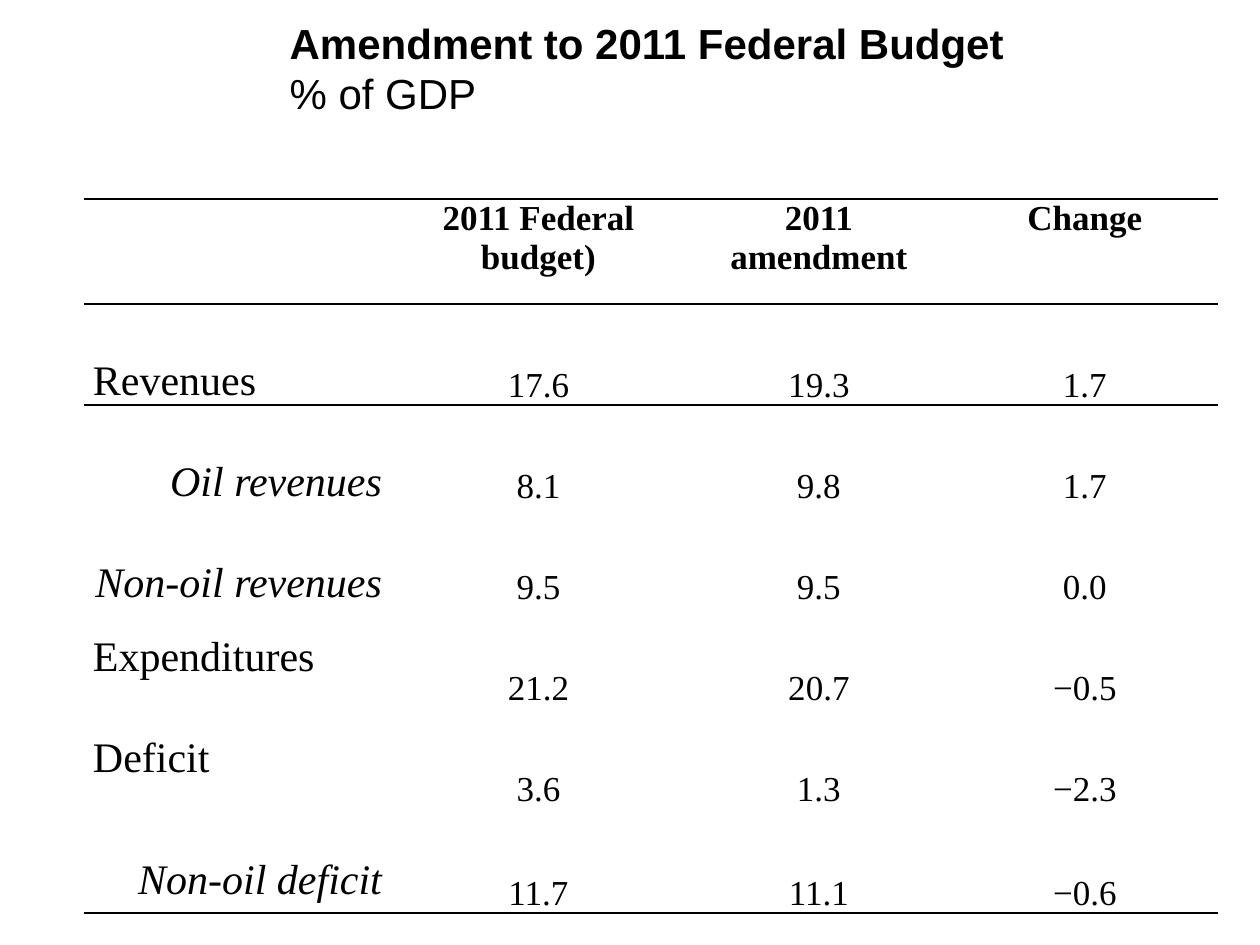
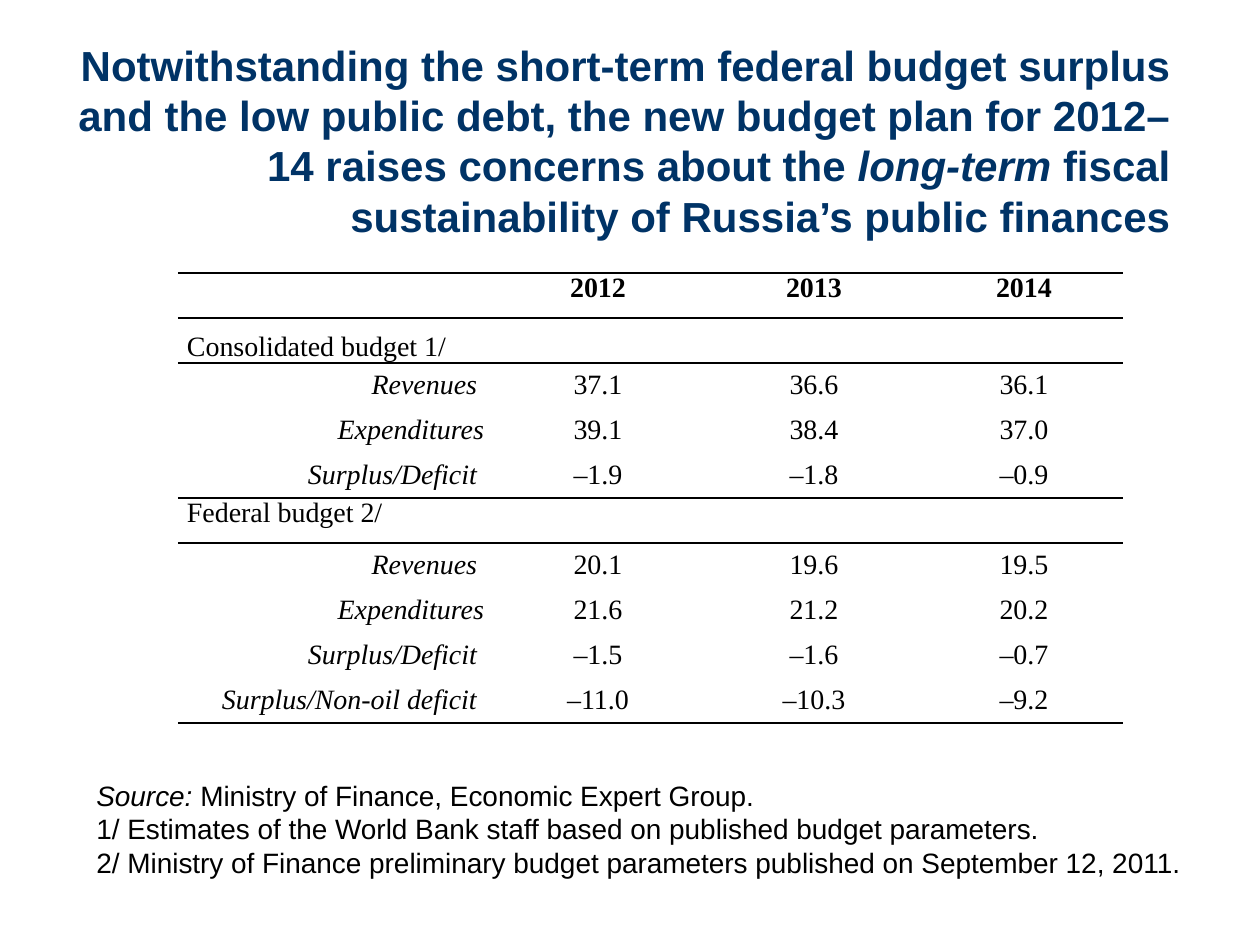
import pptx
import pptx.dml.color
import pptx.enum.text
import pptx.oxml
import pptx.oxml.ns
import pptx.util

PIXELS_PER_INCH = 126
SANS, SERIF = "Arial", "Times New Roman"
BLACK, NAVY = "000000", "003366"
PLAIN_TABLE_STYLE = "{2D5ABB26-0587-4C30-8999-92F81FD0307C}"
ALIGN = pptx.enum.text.PP_ALIGN
ANCHOR = pptx.enum.text.MSO_ANCHOR
TITLE_SIZE = 24

GROUP = {"anchor": ANCHOR.MIDDLE}
ITEM = {"anchor": ANCHOR.MIDDLE, "align": ALIGN.RIGHT, "italic": True}
LOW_GROUP = {"anchor": ANCHOR.BOTTOM}
LOW_ITEM = {**ITEM, "anchor": ANCHOR.BOTTOM}
TOP_GROUP = {"anchor": ANCHOR.TOP}
RAISED_ITEM = {**LOW_ITEM, "bottom": 9}

AMENDMENT_HEADER = ["2011 Federal budget)", "2011 amendment", "Change"]
AMENDMENT_ROWS = [
    ("Revenues", LOW_GROUP, ["17.6", "19.3", "1.7"]),
    ("Oil revenues", LOW_ITEM, ["8.1", "9.8", "1.7"]),
    ("Non-oil revenues", LOW_ITEM, ["9.5", "9.5", "0.0"]),
    ("Expenditures", GROUP, ["21.2", "20.7", "−0.5"]),
    ("Deficit", GROUP, ["3.6", "1.3", "−2.3"]),
    ("Non-oil deficit", RAISED_ITEM, ["11.7", "11.1", "−0.6"]),
]
PLAN_HEADER = ["2012", "2013", "2014"]
PLAN_ROWS = [
    ("Consolidated budget 1/", LOW_GROUP, ["", "", ""]),
    ("Revenues ", ITEM, ["37.1", "36.6", "36.1"]),
    ("Expenditures", ITEM, ["39.1", "38.4", "37.0"]),
    ("Surplus/Deficit ", ITEM, ["–1.9", "–1.8", "–0.9"]),
    ("Federal budget 2/", TOP_GROUP, ["", "", ""]),
    ("Revenues ", ITEM, ["20.1", "19.6", "19.5"]),
    ("Expenditures", ITEM, ["21.6", "21.2", "20.2"]),
    ("Surplus/Deficit ", ITEM, ["–1.5", "–1.6", "–0.7"]),
    ("Surplus/Non-oil deficit ", ITEM, ["–11.0", "–10.3", "–9.2"]),
]


def px(length):
    return pptx.util.Emu(round(length * 914400 / PIXELS_PER_INCH))


def color(hex_string):
    return pptx.dml.color.RGBColor.from_string(hex_string)


def write(para, text, size, font=SANS, fill=BLACK, bold=False, italic=False, align=ALIGN.LEFT):
    para.alignment = align
    para.font.size = pptx.util.Pt(size)
    if not text:
        return
    span = para.add_run()
    span.text = text
    span.font.name = font
    span.font.size = pptx.util.Pt(size)
    span.font.bold = bold
    span.font.italic = italic
    span.font.color.rgb = color(fill)


def write_lines(frame, lines, **text_format):
    for index, spans in enumerate(lines):
        para = frame.add_paragraph() if index else frame.paragraphs[0]
        for text, span_format in spans:
            write(para, text, **{**text_format, **span_format})


def place_text(shape, box, lines, anchor, **text_format):
    shape.left, shape.top, shape.width, shape.height = map(px, box)
    frame = shape.text_frame
    frame.word_wrap = True
    frame.auto_size = pptx.enum.text.MSO_AUTO_SIZE.NONE
    frame.vertical_anchor = anchor
    write_lines(frame, lines, **text_format)


def add_border(cell, side):
    line = pptx.oxml.parse_xml(
        f'<a:ln{side} {pptx.oxml.ns.nsdecls("a")} w="12700"><a:solidFill>'
        f'<a:srgbClr val="{BLACK}"/></a:solidFill></a:ln{side}>')
    cell._tc.get_or_add_tcPr().append(line)


def fill_cell(cell, text, size, anchor=ANCHOR.TOP, bottom=0, **text_format):
    cell.margin_left = cell.margin_right = px(9)
    cell.margin_top = 0
    cell.margin_bottom = px(bottom)
    cell.vertical_anchor = anchor
    write(cell.text_frame.paragraphs[0], text, size, font=SERIF, **text_format)


def add_budget_table(page, left, top, widths, heights, header, rows, rules,
                     label_size, value_size, value_anchor):
    graphic = page.shapes.add_table(len(heights), len(widths), px(left), px(top),
                                    px(sum(widths)), px(sum(heights)))
    table = graphic.table
    table.first_row = table.horz_banding = False
    table._tbl.tblPr.find(pptx.oxml.ns.qn("a:tableStyleId")).text = PLAIN_TABLE_STYLE
    for column, width in zip(table.columns, widths):
        column.width = px(width)
    for row, height in zip(table.rows, heights):
        row.height = px(height)

    for index, text in enumerate([""] + header):
        fill_cell(table.cell(0, index), text, value_size, bold=True, align=ALIGN.CENTER)
    for row, (label, label_format, values) in enumerate(rows, 1):
        fill_cell(table.cell(row, 0), label, label_size, **label_format)
        for column, value in enumerate(values, 1):
            fill_cell(table.cell(row, column), value, value_size,
                      anchor=value_anchor, align=ALIGN.CENTER)

    for row in range(len(heights)):
        for column in range(len(widths)):
            cell = table.cell(row, column)
            if row in rules:
                add_border(cell, "T")
            if row + 1 in rules:
                add_border(cell, "B")
            cell.fill.background()


def add_page(deck):
    return deck.slides.add_slide(deck.slide_layouts[5])


def build_amendment_page(deck):
    page = add_page(deck)
    place_text(page.shapes.title, (277, 11, 789, 165), [
        [("Amendment to 2011 Federal Budget", {"bold": True})],
        [("% of GDP", {})],
    ], ANCHOR.TOP, size=TITLE_SIZE)
    add_budget_table(page, 84, 199, [307, 295, 266, 266], [105] + [101] * 5 + [104],
                     AMENDMENT_HEADER, AMENDMENT_ROWS, rules={0, 1, 7},
                     label_size=24, value_size=20, value_anchor=ANCHOR.BOTTOM)


def build_plan_page(deck):
    page = add_page(deck)
    place_text(page.shapes.title, (42, 53, 1141, 194), [[
        ("Notwithstanding the short-term federal budget surplus and the low public debt, "
         "the new budget plan for 2012–14 raises concerns about the ", {}),
        ("long-term ", {"italic": True}),
        ("fiscal sustainability of Russia’s public finances", {}),
    ]], ANCHOR.BOTTOM, size=TITLE_SIZE, fill=NAVY, bold=True, align=ALIGN.RIGHT)
    add_budget_table(page, 178, 273, [315, 210, 222, 198], [45] * 10,
                     PLAN_HEADER, PLAN_ROWS, rules={0, 1, 5, 10},
                     label_size=16, value_size=16, value_anchor=ANCHOR.MIDDLE)
    notes_box = (84, 771, 1124, 115)
    place_text(page.shapes.add_textbox(*map(px, notes_box)), notes_box, [
        [("Source:", {"italic": True}), (" Ministry of Finance, Economic Expert Group.", {})],
        [("1/ Estimates of the World Bank staff based on published budget parameters.", {})],
        [("2/ Ministry of Finance preliminary budget parameters published on "
          "September 12, 2011.", {})],
    ], ANCHOR.MIDDLE, size=16)


def main():
    deck = pptx.Presentation()
    deck.slide_width, deck.slide_height = px(1260), px(945)
    build_amendment_page(deck)
    build_plan_page(deck)
    deck.save("out.pptx")


if __name__ == "__main__":
    main()
